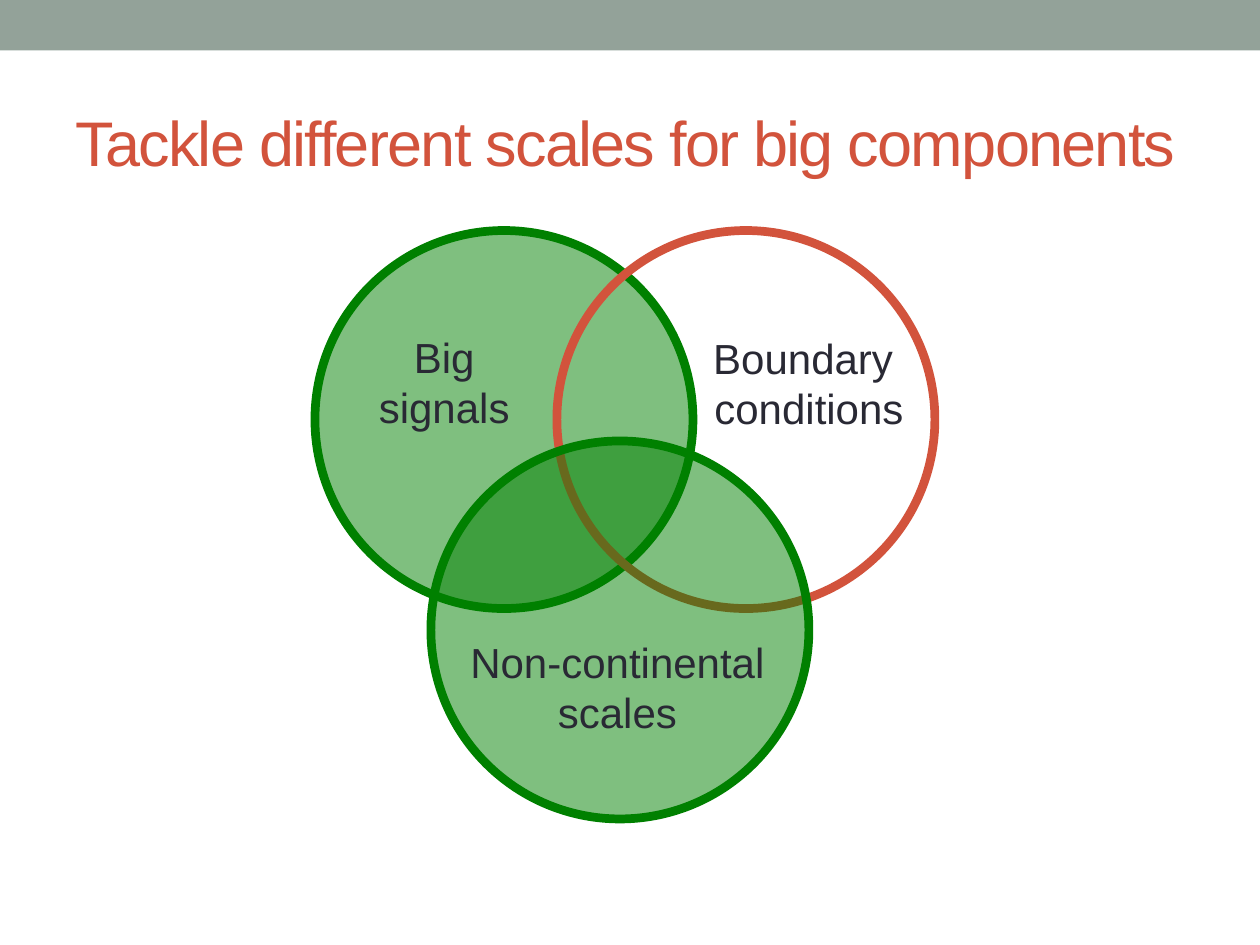
from lxml.etree import SubElement
from pptx import Presentation
from pptx.dml.color import RGBColor
from pptx.enum.shapes import MSO_SHAPE
from pptx.enum.text import MSO_ANCHOR, MSO_AUTO_SIZE, PP_ALIGN
from pptx.oxml.ns import qn
from pptx.util import Inches, Pt

GREEN, RED, SAGE, INK = "008000", "D2533C", "93A299", "292934"
DIAMETER = 3


def colour(value):
    return RGBColor.from_string(value)


class SlideBuilder:
    font_name = "Arial"

    def __init__(self, page):
        self.page = page

    def shape(self, kind, left, top, width, height, fill=None, opacity=100, line=None):
        item = self.page.shapes.add_shape(
            kind, Inches(left), Inches(top), Inches(width), Inches(height))
        item.shadow.inherit = False
        if fill:
            item.fill.solid()
            item.fill.fore_color.rgb = colour(fill)
        else:
            item.fill.background()
        if fill and opacity < 100:
            shade = item.fill._xPr.find(".//" + qn("a:srgbClr"))
            SubElement(shade, qn("a:alpha"), val=str(opacity * 1000))
        if line:
            item.line.color.rgb = colour(line)
            item.line.width = Pt(5)
        else:
            item.line.fill.background()

    def text(self, left, top, width, height, lines, size, ink, align,
             spacing=None, **frame_format):
        box = self.page.shapes.add_textbox(
            Inches(left), Inches(top), Inches(width), Inches(height))
        frame = box.text_frame
        for name, value in frame_format.items():
            setattr(frame, name, value)
        for index, line in enumerate(lines):
            para = frame.add_paragraph() if index else frame.paragraphs[0]
            para.alignment = align
            span = para.add_run()
            span.text = line
            for name, value in {"name": self.font_name, "size": Pt(size)}.items():
                setattr(span.font, name, value)
            span.font.color.rgb = colour(ink)
            if spacing is not None:
                span._r.get_or_add_rPr().set("spc", str(spacing * 100))

    def title(self, words):
        self.text(0.5, 0.58, 9, 1.08, [words], 36, RED, PP_ALIGN.LEFT, spacing=-1,
                  word_wrap=True, vertical_anchor=MSO_ANCHOR.MIDDLE)

    def circle(self, left, top, line, fill=None):
        self.shape(MSO_SHAPE.OVAL, left, top, DIAMETER, DIAMETER, fill, 50, line)

    def label(self, left, top, width, lines):
        self.text(left, top, width, 0.91, lines, 24, INK, PP_ALIGN.CENTER,
                  word_wrap=False, auto_size=MSO_AUTO_SIZE.SHAPE_TO_FIT_TEXT)


def main():
    deck = Presentation()
    deck.slide_width, deck.slide_height = Inches(10), Inches(7.5)
    builder = SlideBuilder(deck.slides.add_slide(deck.slide_layouts[6]))

    # Top band and title
    builder.shape(MSO_SHAPE.RECTANGLE, 0, 0, 10, 0.4, fill=SAGE)
    builder.title("Tackle different scales for big components")

    # Overlapping circles
    builder.circle(2.5, 1.83, GREEN, fill=GREEN)
    builder.circle(4.42, 1.83, RED)
    builder.circle(3.42, 3.5, GREEN, fill=GREEN)

    # Circle labels
    builder.label(2.9, 2.58, 1.25, ["Big", "signals"])
    builder.label(3.62, 5, 2.56, ["Non-continental", "scales"])
    builder.label(5.56, 2.59, 1.72, ["Boundary ", "conditions"])

    deck.save("out.pptx")


if __name__ == "__main__":
    main()
